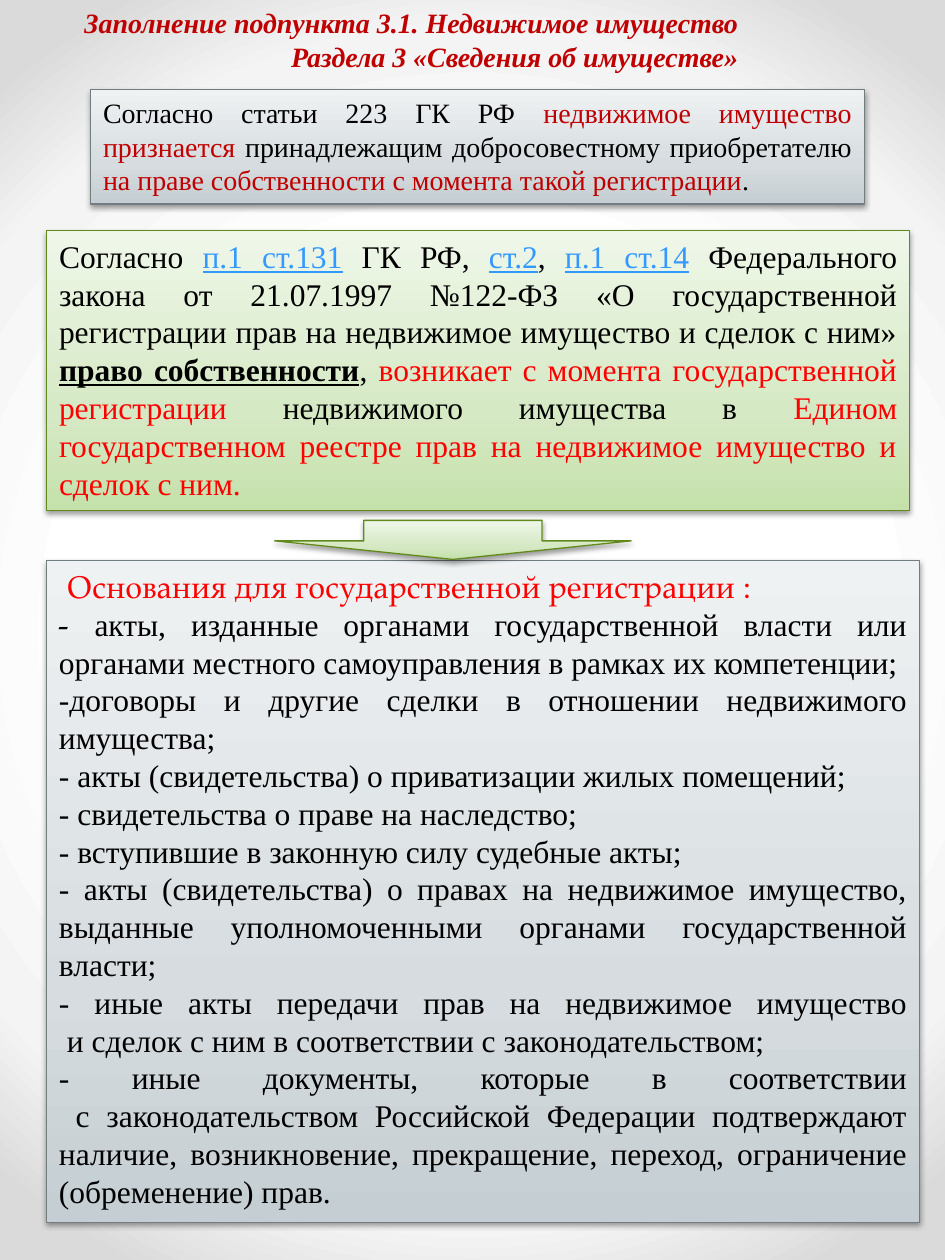
"""Build the slide on filling in subsection 3.1, real estate."""
from dataclasses import dataclass

from lxml import etree
from pptx import Presentation
from pptx.dml.color import RGBColor
from pptx.enum.shapes import MSO_SHAPE
from pptx.enum.text import MSO_ANCHOR, MSO_AUTO_SIZE, PP_ALIGN
from pptx.oxml.ns import qn
from pptx.util import Inches, Pt

RECTANGLE = MSO_SHAPE.RECTANGLE
DOWN_ARROW = MSO_SHAPE.DOWN_ARROW
JUSTIFY, RIGHT = PP_ALIGN.JUSTIFY, PP_ALIGN.RIGHT
TOP, BOTTOM = MSO_ANCHOR.TOP, MSO_ANCHOR.BOTTOM
NO_AUTOFIT = MSO_AUTO_SIZE.NONE
SERIF, PAGELLA = "Times New Roman", "TeX Gyre Pagella"
BLACK, RED, CRIMSON, LINK = "000000", "FF0000", "C00000", "3399FF"


@dataclass(frozen=True)
class Palette:
    stops: tuple[tuple[int, str], ...]
    line: str


@dataclass(frozen=True)
class Span:
    text: str
    color: str = BLACK
    font: str = SERIF
    bold: bool = False
    italic: bool = False
    underline: bool = False


@dataclass(frozen=True)
class Panel:
    box: tuple[float, float, float, float]
    palette: Palette
    size: int = 18
    paragraphs: tuple[tuple[Span, ...], ...] = ()
    preset: int = RECTANGLE


GREEN = Palette(((0, "C5E1AB"), (35, "D6E9C5"), (100, "EFF7E9")), "62891C")
GREY = Palette(((0, "C5CED2"), (35, "D6DCDF"), (100, "EFF2F3")), "727D82")
BACKDROP = ((50, "FFFFFF"), (76, "F4F4F4"), (92, "DADADA"))

HEADING = Span(
    "Заполнение подпункта 3.1. Недвижимое имущество\nРаздела 3 «Сведения об имуществе»",
    CRIMSON, bold=True, italic=True,
)
CIVIL_CODE = (
    Span("Согласно статьи 223 ГК РФ "),
    Span("недвижимое имущество признается ", CRIMSON),
    Span("принадлежащим добросовестному приобретателю "),
    Span("на праве собственности с момента такой регистрации", CRIMSON),
    Span("."),
)
OWNERSHIP = (
    Span("Согласно "),
    Span("п.1 ст.131", LINK, underline=True),
    Span(" ГК РФ, "),
    Span("ст.2", LINK, underline=True),
    Span(", "),
    Span("п.1 ст.14", LINK, underline=True),
    Span(" Федерального закона от 21.07.1997 №122-ФЗ «О государственной "
         "регистрации прав на недвижимое имущество и сделок с ним» "),
    Span("право собственности", bold=True, underline=True),
    Span(", "),
    Span("возникает с момента государственной регистрации ", RED),
    Span("недвижимого имущества в "),
    Span("Едином государственном реестре прав на недвижимое имущество и сделок с ним.", RED),
)
GROUNDS = (
    "-договоры и другие сделки в отношении недвижимого имущества;",
    "- акты (свидетельства) о приватизации жилых помещений;",
    "- свидетельства о праве на наследство;",
    "- вступившие в законную силу судебные акты;",
    "- акты (свидетельства) о правах на недвижимое имущество, выданные "
    "уполномоченными органами государственной власти;",
    "- иные акты передачи прав на недвижимое имущество\n"
    " и сделок с ним в соответствии с законодательством;",
    "- иные документы, которые в соответствии\n"
    " с законодательством Российской Федерации подтверждают наличие, "
    "возникновение, прекращение, переход, ограничение (обременение) прав.",
)
REGISTRATION = (
    (Span(" Основания для государственной регистрации :", RED, PAGELLA),),
    (Span("- ", font=PAGELLA),
     Span("акты, изданные органами государственной власти или органами "
          "местного самоуправления в рамках их компетенции;")),
    *((Span(ground),) for ground in GROUNDS),
)
PANELS = (
    Panel((0.37, 1.83, 6.85, 2.22), GREEN, paragraphs=(OWNERSHIP,)),
    Panel((0.72, 0.71, 6.14, 0.91), GREY, 16, (CIVIL_CODE,)),
    Panel((0.37, 4.45, 6.93, 5.25), GREY, paragraphs=REGISTRATION),
    Panel((2.18, 4.13, 2.83, 0.31), GREEN, preset=DOWN_ARROW),
)


def rgb(color: str) -> RGBColor:
    return RGBColor.from_string(color)


def add_color(parent, color: str):
    return etree.SubElement(parent, qn("a:srgbClr"), val=color)


def set_gradient(owner, stops: tuple[tuple[int, str], ...], radial: bool = False) -> None:
    gradient = owner.find(".//" + qn("a:gradFill"))
    for child in list(gradient):
        gradient.remove(child)
    stop_list = etree.SubElement(gradient, qn("a:gsLst"))
    for position, color in stops:
        add_color(etree.SubElement(stop_list, qn("a:gs"), pos=str(position * 1000)), color)
    if radial:
        circle = etree.SubElement(gradient, qn("a:path"), path="circle")
        center = {side: "50000" for side in "ltrb"}
        etree.SubElement(circle, qn("a:fillToRect"), center)
    else:
        etree.SubElement(gradient, qn("a:lin"), ang="16200000", scaled="0")


def add_shadow(shape) -> None:
    shape.shadow.inherit = False
    effects = shape._element.spPr.find(qn("a:effectLst"))
    shadow = etree.SubElement(
        effects, qn("a:outerShdw"), blurRad=str(Pt(3.1)), dist=str(Pt(1.6)),
        dir="5400000", rotWithShape="0",
    )
    etree.SubElement(add_color(shadow, BLACK), qn("a:alpha"), val="38000")


def write_spans(paragraph, spans: tuple[Span, ...], size: int, alignment) -> None:
    paragraph.alignment = alignment
    for span in spans:
        for index, line in enumerate(span.text.split("\n")):
            if index:
                paragraph.add_line_break()
            run = paragraph.add_run()
            run.text = line
            font = run.font
            font.name, font.size = span.font, Pt(size)
            font.bold, font.italic, font.underline = span.bold, span.italic, span.underline
            font.color.rgb = rgb(span.color)


def add_panel(slide, panel: Panel) -> None:
    shape = slide.shapes.add_shape(panel.preset, *map(Inches, panel.box))
    if panel.preset == DOWN_ARROW:
        shape.adjustments[0] = 0.5
        shape.adjustments[1] = 0.475
    shape.fill.gradient()
    set_gradient(shape._element, panel.palette.stops)
    shape.line.color.rgb = rgb(panel.palette.line)
    shape.line.width = Pt(0.75)
    add_shadow(shape)
    frame = shape.text_frame
    frame.word_wrap = True
    frame.vertical_anchor = TOP
    for index, spans in enumerate(panel.paragraphs):
        paragraph = frame.add_paragraph() if index else frame.paragraphs[0]
        write_spans(paragraph, spans, panel.size, JUSTIFY)


def place_title(slide) -> None:
    title = slide.shapes.title
    title.left, title.top, title.width, title.height = map(Inches, (0.52, -0.08, 6.38, 0.71))
    frame = title.text_frame
    frame.auto_size = NO_AUTOFIT
    frame.word_wrap = True
    frame.vertical_anchor = BOTTOM
    frame.margin_right = Inches(1.04)
    write_spans(frame.paragraphs[0], (HEADING,), 16, RIGHT)


def main() -> None:
    deck = Presentation()
    deck.slide_width, deck.slide_height = Inches(7.5), Inches(10)
    slide = deck.slides.add_slide(deck.slide_layouts[5])
    slide.background.fill.gradient()
    set_gradient(slide._element, BACKDROP, radial=True)
    place_title(slide)
    for panel in PANELS:
        add_panel(slide, panel)
    deck.save("out.pptx")


if __name__ == "__main__":
    main()
